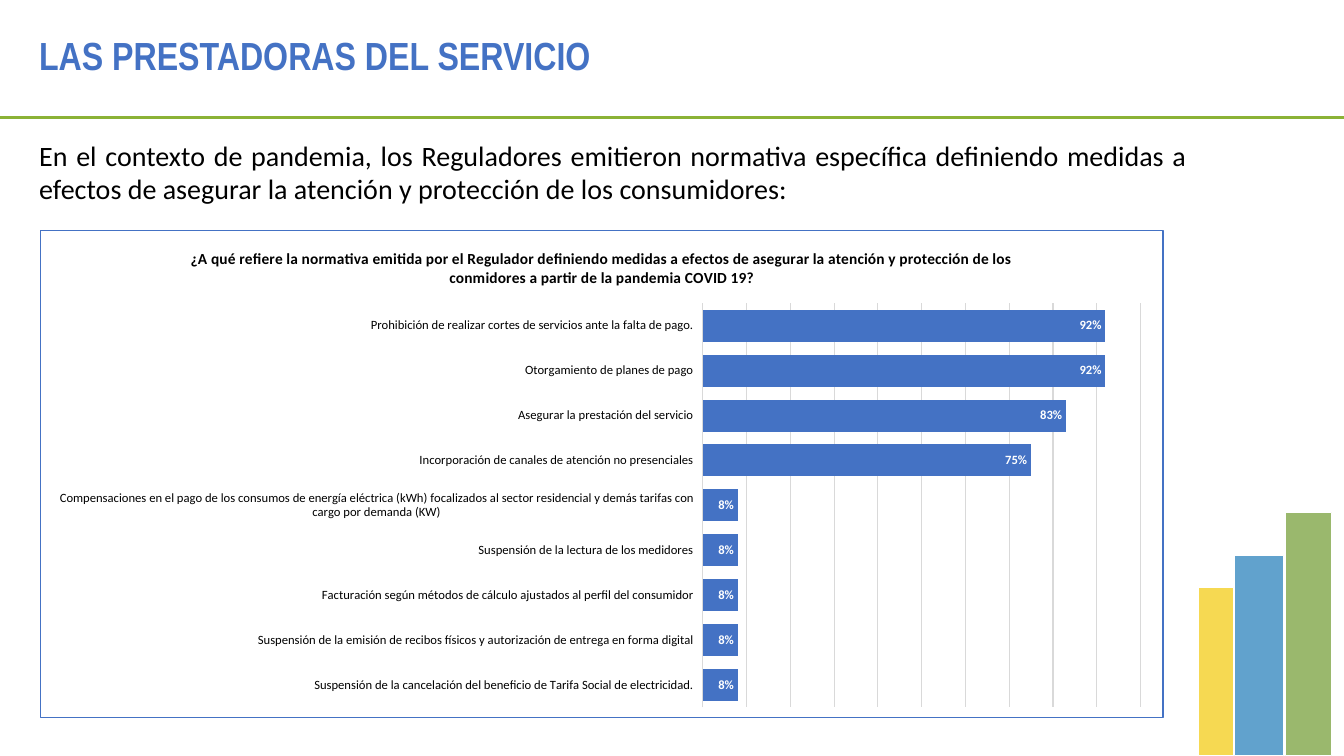
from dataclasses import dataclass

from lxml.etree import SubElement
from pptx import Presentation
from pptx.chart.data import CategoryChartData
from pptx.dml.color import RGBColor as RGB
from pptx.enum.chart import (
    XL_CHART_TYPE as Kind,
    XL_LABEL_POSITION as Spot,
    XL_TICK_LABEL_POSITION as Side,
    XL_TICK_MARK as Tick,
)
from pptx.enum.shapes import MSO_CONNECTOR as Link, MSO_SHAPE as Form
from pptx.enum.text import MSO_ANCHOR as Anchor, MSO_AUTO_SIZE as Fit, PP_ALIGN as Align
from pptx.oxml import parse_xml
from pptx.oxml.ns import nsdecls, qn
from pptx.util import Inches, Pt


@dataclass(frozen=True)
class Theme:
    blue: str = "4472C4"
    green: str = "8BB236"
    grey: str = "D9D9D9"
    black: str = "000000"
    white: str = "FFFFFF"
    head: str = "Arial Narrow"
    body: str = "Calibri"
    title: int = 28
    lead: int = 20
    ask: int = 11
    base: int = 10
    small: int = 9
    thin: float = 0.75
    rule: float = 2.25


WIDTH, HEIGHT = 13.33, 7.5

TITLE = "LAS PRESTADORAS DEL SERVICIO"
LEAD = (
    "En el contexto de pandemia, los Reguladores emitieron normativa específica "
    "definiendo medidas a efectos de asegurar la atención y protección de los consumidores:"
)
ASK = (
    "¿A qué refiere la normativa emitida por el Regulador definiendo medidas a efectos "
    "de asegurar la atención y protección de los conmidores a partir de la pandemia COVID 19?"
)
SHARES = {
    "Prohibición de realizar cortes de servicios ante la falta de pago.": 0.92,
    "Otorgamiento de planes de pago": 0.92,
    "Asegurar la prestación del servicio": 0.83,
    "Incorporación de canales de atención no presenciales": 0.75,
    "Compensaciones en el pago de los consumos de energía eléctrica (kWh) focalizados "
    "al sector residencial y demás tarifas con cargo por demanda (KW)": 0.08,
    "Suspensión de la lectura de los medidores": 0.08,
    "Facturación según métodos de cálculo ajustados al perfil del consumidor": 0.08,
    "Suspensión de la emisión de recibos físicos y autorización de entrega en forma digital": 0.08,
    "Suspensión de la cancelación del beneficio de Tarifa Social de electricidad.": 0.08,
}
BLOCKS = [
    (12.75, 0.46, 2.42, "61911B", 64),
    (12.24, 0.49, 1.99, "006AAF", 62),
    (11.89, 0.34, 1.67, "F3C700", 68),
]
PLOT = {"x": 0.59, "y": 0.15, "w": 0.39, "h": 0.83}


class Deck:
    def __init__(self, theme):
        self.theme = theme
        self.file = Presentation()
        self.file.slide_width = Inches(WIDTH)
        self.file.slide_height = Inches(HEIGHT)
        self.slide = self.file.slides.add_slide(self.file.slide_layouts[6])
        self.shapes = self.slide.shapes

    def font(self, font, size, color, name=None, bold=False):
        font.size = Pt(size)
        font.name = name or self.theme.body
        font.bold = bold
        font.color.rgb = RGB.from_string(color)

    def stroke(self, line, color, width):
        line.color.rgb = RGB.from_string(color)
        line.width = Pt(width)

    def rule(self, top):
        line = self.shapes.add_connector(
            Link.STRAIGHT, 0, Inches(top), Inches(WIDTH), Inches(top)
        )
        self.stroke(line.line, self.theme.green, self.theme.rule)
        SubElement(line.element.spPr, qn("a:effectLst"))

    def block(self, left, width, height, color, alpha):
        box = self.shapes.add_shape(
            Form.RECTANGLE, Inches(left), Inches(HEIGHT - height), Inches(width), Inches(height)
        )
        box.shadow.inherit = False
        box.fill.solid()
        box.fill.fore_color.rgb = RGB.from_string(color)
        tint = box.element.spPr.find(qn("a:solidFill")).find(qn("a:srgbClr"))
        SubElement(tint, qn("a:alpha"), val=str(alpha * 1000))
        self.stroke(box.line, self.theme.white, self.theme.thin)

    def text(self, words, area, size, color, name, bold=False, align=Align.LEFT, anchor=Anchor.TOP):
        frame = self.shapes.add_textbox(*map(Inches, area)).text_frame
        frame.word_wrap = True
        frame.auto_size = Fit.SHAPE_TO_FIT_TEXT
        frame.vertical_anchor = anchor
        para = frame.paragraphs[0]
        para.text = words
        para.alignment = align
        self.font(para.font, size, color, name, bold)

    def bars(self, title, shares, area):
        look = self.theme
        data = CategoryChartData(number_format="0%")
        data.categories = list(shares)
        data.add_series("Series 1", list(shares.values()))
        chart = self.shapes.add_chart(Kind.BAR_CLUSTERED, *map(Inches, area), data).chart
        self.font(chart.font, look.base, look.black)
        chart.has_legend = False
        chart.has_title = True
        para = chart.chart_title.text_frame.paragraphs[0]
        para.text = title
        self.font(para.font, look.ask, look.black, bold=True)
        self.axes(chart)
        plot = chart.plots[0]
        plot.gap_width = 40
        plot.vary_by_categories = False
        fill = plot.series[0].format.fill
        fill.solid()
        fill.fore_color.rgb = RGB.from_string(look.blue)
        plot.has_data_labels = True
        labels = plot.data_labels
        labels.show_value = True
        labels.position = Spot.INSIDE_END
        labels.number_format = "0%"
        labels.number_format_is_linked = False
        self.font(labels.font, look.small, look.white, bold=True)
        self.frame(chart)

    def axes(self, chart):
        look = self.theme
        names = chart.category_axis
        names.reverse_order = True
        names.major_tick_mark = names.minor_tick_mark = Tick.NONE
        names.tick_label_position = Side.LOW
        self.font(names.tick_labels.font, look.small, look.black)
        self.stroke(names.format.line, look.grey, look.thin)
        scale = chart.value_axis
        scale.minimum_scale, scale.maximum_scale, scale.major_unit = 0, 1, 0.1
        scale.has_major_gridlines = True
        self.stroke(scale.major_gridlines.format.line, look.grey, look.thin)
        scale.visible = False

    def frame(self, chart):
        look = self.theme
        root = chart.element.find(qn("c:chart"))
        root.addnext(parse_xml(
            f'<c:spPr {nsdecls("c", "a")}>'
            f'<a:solidFill><a:srgbClr val="{look.white}"/></a:solidFill>'
            f'<a:ln w="{Pt(look.thin)}"><a:solidFill><a:srgbClr val="{look.blue}"/>'
            "</a:solidFill></a:ln></c:spPr>"
        ))
        modes = '<c:layoutTarget val="inner"/><c:xMode val="edge"/><c:yMode val="edge"/>'
        sizes = "".join(f'<c:{key} val="{val}"/>' for key, val in PLOT.items())
        root.find(qn("c:plotArea")).insert(0, parse_xml(
            f'<c:layout {nsdecls("c")}><c:manualLayout>{modes}{sizes}</c:manualLayout></c:layout>'
        ))


def main():
    look = Theme()
    deck = Deck(look)
    deck.rule(1.17)
    for block in BLOCKS:
        deck.block(*block)
    deck.text(TITLE, (0.29, 0.26, 9.2, 0.57), look.title, look.blue, look.head,
              bold=True, anchor=Anchor.MIDDLE)
    deck.text(LEAD, (0.29, 1.32, 11.58, 0.77), look.lead, look.black, look.body,
              align=Align.JUSTIFY)
    deck.bars(ASK, SHARES, (0.4, 2.28, 11.14, 4.84))
    deck.file.save("out.pptx")


if __name__ == "__main__":
    main()
